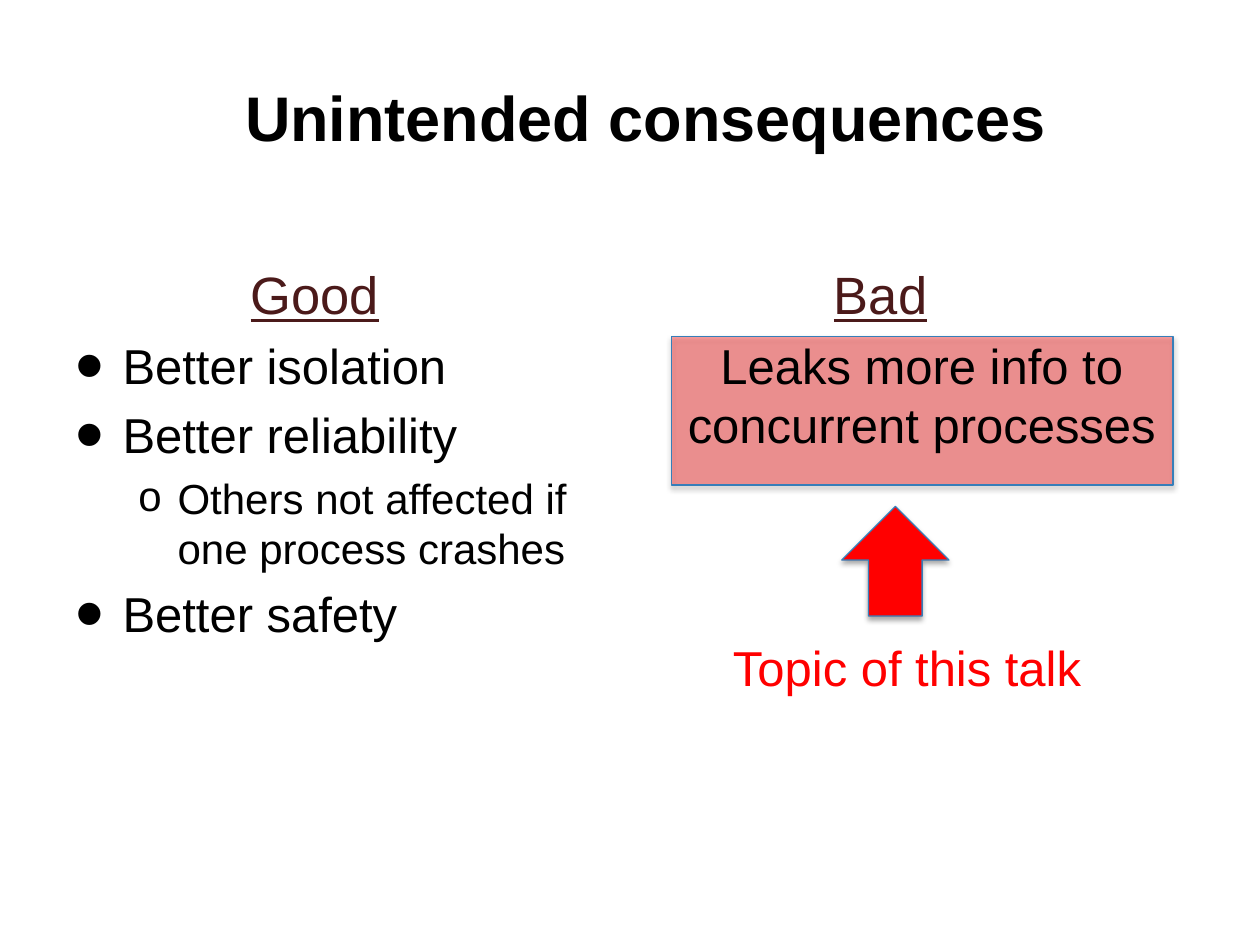
import dataclasses

import pptx
import pptx.dml.color
import pptx.enum.shapes
import pptx.enum.text
import pptx.oxml
import pptx.oxml.ns
import pptx.util

Cm = pptx.util.Cm
Pt = pptx.util.Pt
RGB = pptx.dml.color.RGBColor.from_string
qn = pptx.oxml.ns.qn
ALIGN = pptx.enum.text.PP_ALIGN
ANCHOR = pptx.enum.text.MSO_ANCHOR
SHAPE = pptx.enum.shapes.MSO_SHAPE


@dataclasses.dataclass(frozen=True)
class Theme:
    font: str = "Arial"
    text: str = "000000"
    heading: str = "4B1A1A"
    accent: str = "FF0000"
    outline: str = "367EB9"
    title_size: float = 36
    heading_size: float = 30
    body_size: float = 28
    sub_size: float = 24


THEME = Theme()


def add_xml(parent, tag, children="", **attrs):
    values = " ".join(f'{k}="{v}"' for k, v in attrs.items())
    el = pptx.oxml.parse_xml(
        f'<a:{tag} {pptx.oxml.ns.nsdecls("a")} {values}>{children}</a:{tag}>')
    parent.append(el)


def add_text(tf, text, size=THEME.body_size, color=THEME.text, bold=False,
             underline=False, align=ALIGN.LEFT, before=0, level=0,
             left=0, indent=0, bullet=None, bullet_size=100):
    p = tf.paragraphs[0] if not tf.text else tf.add_paragraph()
    p.alignment, p.level = align, level
    p.space_before = Pt(before)
    pPr = p._p.get_or_add_pPr()
    pPr.set("marL", str(Cm(left)))
    pPr.set("indent", str(Cm(indent)))
    if bullet:
        add_xml(pPr, "buClr", f'<a:srgbClr val="{color}"/>')
        add_xml(pPr, "buSzPct", val=bullet_size * 1000)
        add_xml(pPr, "buFont", typeface=THEME.font)
        add_xml(pPr, "buChar", char=bullet)
    else:
        add_xml(pPr, "buNone")
    r = p.add_run()
    r.text = text
    r.font.name, r.font.size = THEME.font, Pt(size)
    r.font.bold, r.font.underline = bold, underline
    r.font.color.rgb = RGB(color)


def place(sp, left, top, width, height, anchor=ANCHOR.TOP):
    sp.left, sp.top, sp.width, sp.height = map(Cm, (left, top, width, height))
    tf = sp.text_frame
    tf.word_wrap = True
    tf.auto_size = pptx.enum.text.MSO_AUTO_SIZE.NONE
    tf.vertical_anchor = anchor
    tf.margin_left = tf.margin_right = tf.margin_top = tf.margin_bottom = Cm(0.25)
    return tf


def add_heading(tf, text):
    add_text(tf, text, size=THEME.heading_size, color=THEME.heading,
             underline=True, before=6, indent=3.53)


def add_bullet(tf, text):
    add_text(tf, text, before=6, left=0.95, indent=-0.95,
             bullet="•", bullet_size=167)


def add_sub_bullet(tf, text):
    add_text(tf, text, size=THEME.sub_size, before=4.8, level=1,
             left=2.06, indent=-0.79, bullet="o")


def add_marker(s, kind, left, top, width, height, opacity=100):
    sp = s.shapes.add_shape(kind, *map(Cm, (left, top, width, height)))
    sp.fill.solid()
    sp.fill.fore_color.rgb = RGB(THEME.accent)
    sp.line.color.rgb = RGB(THEME.outline)
    sp.line.width = Pt(0.75)
    sp.shadow.inherit = False
    spPr = sp._element.spPr
    add_xml(spPr.find(f"{qn('a:solidFill')}/{qn('a:srgbClr')}"),
            "alpha", val=opacity * 1000)
    add_xml(spPr.find(qn("a:effectLst")), "outerShdw",
            '<a:srgbClr val="000000"><a:alpha val="35000"/></a:srgbClr>',
            blurRad=Pt(3.1), dist=Pt(1.8), dir=90 * 60000, rotWithShape=0)
    return sp


def add_label(s, text, left, top, width, height):
    sp = s.shapes.add_textbox(*map(Cm, (left, top, width, height)))
    tf = sp.text_frame
    tf.word_wrap = True
    tf.auto_size = pptx.enum.text.MSO_AUTO_SIZE.SHAPE_TO_FIT_TEXT
    add_text(tf, text, color=THEME.accent, align=ALIGN.CENTER)


def main():
    prs = pptx.Presentation()
    prs.slide_width, prs.slide_height = Cm(25.4), Cm(19.05)
    s = prs.slides.add_slide(prs.slide_layouts[3])
    title, good, bad = s.placeholders

    tf = place(title, 1.27, 0.76, 22.86, 3.18, anchor=ANCHOR.MIDDLE)
    add_text(tf, "Unintended consequences", size=THEME.title_size, bold=True,
             align=ALIGN.CENTER, indent=0.64)

    tf = place(good, 1.27, 5.03, 11.1, 11.33)
    add_heading(tf, "Good")
    add_bullet(tf, "Better isolation")
    add_bullet(tf, "Better reliability")
    add_sub_bullet(tf, "Others not affected if one process crashes")
    add_bullet(tf, "Better safety")

    tf = place(bad, 13.03, 5.03, 11.1, 11.33)
    add_heading(tf, "Bad")
    add_text(tf, "Leaks more info to concurrent processes",
             align=ALIGN.CENTER, before=6)

    highlight = add_marker(s, SHAPE.RECTANGLE, 13.54, 6.78, 10.11, 3, opacity=36)
    title._element.addprevious(highlight._element)
    add_marker(s, SHAPE.UP_ARROW, 16.97, 10.21, 2.16, 2.21)
    add_label(s, "Topic of this talk", 14.07, 12.73, 8.43, 1.45)

    prs.save("out.pptx")


if __name__ == "__main__":
    main()
